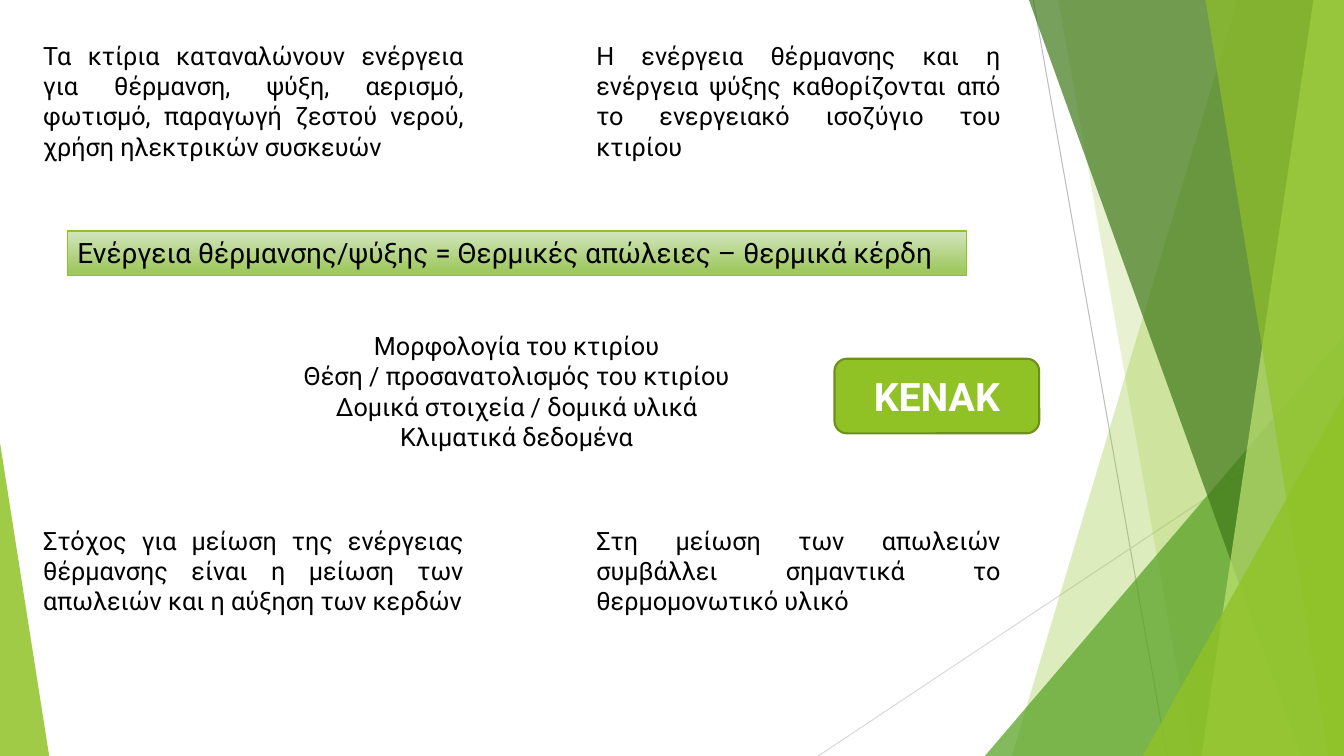
from lxml.etree import SubElement
from pptx import Presentation
from pptx.dml.color import RGBColor
from pptx.enum.shapes import MSO_CONNECTOR, MSO_SHAPE
from pptx.enum.text import MSO_ANCHOR, PP_ALIGN
from pptx.oxml.ns import qn
from pptx.util import Cm, Pt

W, H = 33.87, 19.05
COLORS = {
    "black": "000000", "white": "FFFFFF", "line_dark": "BFBFBF", "line_light": "D9D9D9",
    "green": "90C226", "mid_green": "54A021", "dark_green": "3F7819", "lime": "C0E474",
    "badge_line": "6B901C", "bar_top": "D3E5BE", "bar_bottom": "A0C962",
}
FONT = "Roboto"


def rgb(name):
    return RGBColor.from_string(COLORS[name])


def cm_box(box):
    return [Cm(v) for v in box]


def write(sp, text, size=18, color="black", bold=False, align=PP_ALIGN.LEFT,
          anchor=MSO_ANCHOR.TOP):
    """Fill a shape with text, one paragraph per line."""
    tf = sp.text_frame
    tf.word_wrap = True
    tf.vertical_anchor = anchor
    for i, line in enumerate(text.split("\n")):
        p = tf.add_paragraph() if i else tf.paragraphs[0]
        p.alignment = align
        r = p.add_run()
        r.text = line
        r.font.name, r.font.size, r.font.bold = FONT, Pt(size), bold
        r.font.color.rgb = rgb(color)


def add_text(s, box, text, **fmt):
    write(s.shapes.add_textbox(*cm_box(box)), text, **fmt)


def add_line(s, x1, y1, x2, y2, color):
    c = s.shapes.add_connector(MSO_CONNECTOR.STRAIGHT, *cm_box((x1, y1, x2, y2)))
    c.line.color.rgb = rgb(color)
    c.line.width = Pt(0.75)
    SubElement(c._element.spPr, qn("a:effectLst"))


def tint(sp, color, opacity):
    """Give a shape a see-through fill and no outline; opacity in percent."""
    sp.shadow.inherit = False
    sp.fill.solid()
    sp.fill.fore_color.rgb = rgb(color)
    sp.line.fill.background()
    clr = sp._element.spPr.find(qn("a:solidFill"))[0]
    SubElement(clr, qn("a:alpha")).set("val", str(opacity * 1000))


def add_band(s, top_x, bottom_x, color, opacity):
    """Add a full-height band from a slanted left edge to the slide's right edge."""
    fb = s.shapes.build_freeform(Cm(top_x), 0)
    fb.add_line_segments([(Cm(W), 0), (Cm(W), Cm(H)), (Cm(bottom_x), Cm(H))], close=True)
    tint(fb.convert_to_shape(), color, opacity)


def add_corner(s, left, top, width, apex, color, opacity):
    """Add a right triangle standing on the bottom edge; apex 0 is left, 1 is right."""
    sp = s.shapes.add_shape(MSO_SHAPE.ISOSCELES_TRIANGLE,
                            *cm_box((left, top, width, H - top)))
    sp.adjustments[0] = apex
    tint(sp, color, opacity)


def add_backdrop(s):
    add_line(s, 26.04, 0, 29.41, H, "line_dark")
    add_line(s, W, 10.24, 20.62, H, "line_light")
    add_band(s, 31.19, 25.5, "green", 30)
    add_band(s, 26.67, 30.05, "green", 20)
    add_corner(s, 24.82, 8.46, W - 24.82, 1, "mid_green", 72)
    add_band(s, 25.93, 32.79, "dark_green", 70)
    add_band(s, 33.1, 30.28, "lime", 70)
    add_band(s, 30.38, 33.48, "green", 65)
    add_corner(s, 28.8, 9.98, W - 28.8, 1, "green", 80)
    add_corner(s, 0, 11.15, 1.24, 0, "green", 85)


def add_text_pair(s, box, left_text, right_text):
    """Place two justified texts side by side in the box."""
    x, y, w, h = box
    left_w, right_w = 11.1, 10.69
    add_text(s, (x, y, left_w, h), left_text, align=PP_ALIGN.JUSTIFY)
    add_text(s, (x + w - right_w, y, right_w, h), right_text, align=PP_ALIGN.JUSTIFY)


def add_formula_bar(s, box, text):
    sp = s.shapes.add_shape(MSO_SHAPE.RECTANGLE, *cm_box(box))
    sp.shadow.inherit = False
    sp.fill.gradient()
    sp.fill.gradient_angle = 270
    stops = zip(sp.fill.gradient_stops, (0, 0.88), ("bar_top", "bar_bottom"))
    for stop, position, color in stops:
        stop.position = position
        stop.color.rgb = rgb(color)
    sp.line.color.rgb = rgb("green")
    sp.line.width = Pt(1)
    write(sp, text, size=20)


def add_badge(s, box, text):
    sp = s.shapes.add_shape(MSO_SHAPE.ROUNDED_RECTANGLE, *cm_box(box))
    sp.shadow.inherit = False
    sp.fill.solid()
    sp.fill.fore_color.rgb = rgb("green")
    sp.line.color.rgb = rgb("badge_line")
    sp.line.width = Pt(1.5)
    write(sp, text, size=28, color="white", bold=True, align=PP_ALIGN.CENTER,
          anchor=MSO_ANCHOR.MIDDLE)


def main():
    prs = Presentation()
    prs.slide_width, prs.slide_height = Cm(W), Cm(H)
    s = prs.slides.add_slide(prs.slide_layouts[6])
    add_backdrop(s)
    add_text_pair(
        s, (0.84, 0.89, 24.63, 3.33),
        "Τα κτίρια καταναλώνουν ενέργεια για θέρμανση, ψύξη, αερισμό, φωτισμό, "
        "παραγωγή ζεστού νερού, χρήση ηλεκτρικών συσκευών",
        "Η ενέργεια θέρμανσης και η ενέργεια ψύξης καθορίζονται από το ενεργειακό "
        "ισοζύγιο του κτιρίου")
    add_text(s, (6.38, 8.2, 13.28, 3.33),
             "Μορφολογία του κτιρίου\nΘέση / προσανατολισμός του κτιρίου\n"
             "Δομικά στοιχεία / δομικά υλικά\nΚλιματικά δεδομένα",
             align=PP_ALIGN.CENTER)
    add_formula_bar(s, (1.7, 5.82, 22.66, 1.12),
                    "Ενέργεια θέρμανσης/ψύξης = Θερμικές απώλειες – θερμικά κέρδη")
    add_text_pair(
        s, (0.84, 13.11, 24.63, 2.57),
        "Στόχος για μείωση της ενέργειας θέρμανσης είναι η μείωση των απωλειών και "
        "η αύξηση των κερδών",
        "Στη μείωση των απωλειών συμβάλλει σημαντικά το θερμομονωτικό υλικό")
    add_badge(s, (21.03, 9.04, 5.16, 1.88), "ΚΕΝΑΚ")
    prs.save("out.pptx")


if __name__ == "__main__":
    main()
